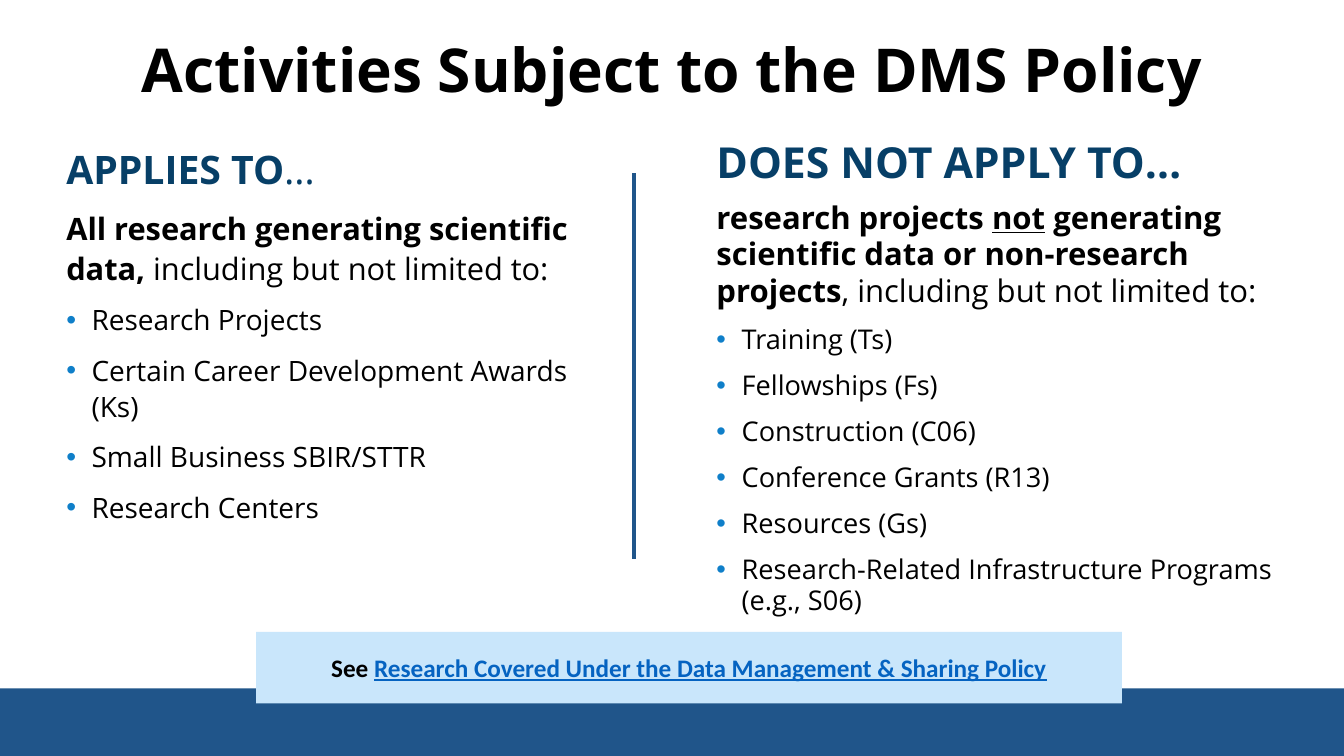
from lxml.etree import SubElement as sub
from pptx import Presentation
from pptx.dml.color import RGBColor as RGB
from pptx.enum.shapes import MSO_CONNECTOR as LINE, MSO_SHAPE as SHAPE
from pptx.enum.text import MSO_ANCHOR as ANCHOR, MSO_AUTO_SIZE as FIT, PP_ALIGN as ALIGN
from pptx.oxml.ns import qn
from pptx.util import Pt

theme = {
    "ink": "000000", "navy": "073F67", "band": "20558A",
    "dot": "0F7FC9", "pale": "C9E6FB", "link": "0563C1",
    "sans": "Open Sans", "note": "Calibri",
    "title": 43.2, "call": 18,
    "left": {"head": 28, "lead": 22, "item": 20},
    "right": {"head": 30.5, "lead": 22.2, "item": 19.4},
}


def write(par, runs, size, color="ink", face="sans", **form):
    """Fill a paragraph with (text, font values) runs, then format it."""
    for key, val in form.items():
        setattr(par, key, val)
    for text, font in runs:
        run = par.add_run()
        run.text = text
        vals = {"name": theme[face], "size": Pt(size), "bold": True} | font
        tint = vals.pop("tint", color)
        for key, val in vals.items():
            setattr(run.font, key, val)
        run.font.color.rgb = RGB.from_string(theme[tint])


def block(box, fill):
    """Add a plain filled rectangle."""
    rect = slide.shapes.add_shape(SHAPE.RECTANGLE, *map(Pt, box))
    rect.shadow.inherit = False
    rect.fill.solid()
    rect.fill.fore_color.rgb = RGB.from_string(theme[fill])
    rect.line.fill.background()
    return rect


deck = Presentation()
deck.slide_width, deck.slide_height = Pt(960), Pt(540)
slide = deck.slides.add_slide(deck.slide_layouts[5])

# Bottom band
block((0, 491.8, 960, 48.2), "band")

# Title
title = slide.shapes.title
place = {"left": 66, "top": 0, "width": 828, "height": 104.4}
for key, val in place.items():
    setattr(title, key, Pt(val))
frame = title.text_frame
frame.auto_size = FIT.NONE
frame.vertical_anchor = ANCHOR.MIDDLE
write(frame.paragraphs[0], [("Activities Subject to the DMS Policy", {})],
      theme["title"], alignment=ALIGN.CENTER, line_spacing=0.9)

# Two columns: heading, lead sentence, bullets
plain = {"bold": False}
columns = [
    ("left", (40.3, 103.7, 398.9, 385.2), 0.9, 1.08,
     [("APPLIES TO", {}), ("…", plain)],
     [("All research generating scientific data, ", {}),
      ("including but not limited to:", plain)],
     ["Research Projects", "Certain Career Development Awards (Ks)",
      "Small Business SBIR/STTR", "Research Centers"]),
    ("right", (504.7, 103.7, 439.2, 346.3), 0.7, 0.98,
     [("DOES NOT APPLY TO…", {})],
     [("research projects ", {}), ("not", {"underline": True}),
      (" generating scientific data or non-research projects", {}),
      (", including but not limited to:", plain)],
     ["Training (Ts)", "Fellowships (Fs)", "Construction (C06)",
      "Conference Grants (R13)", "Resources (Gs)",
      "Research-Related Infrastructure Programs (e.g., S06)"]),
]
for side, box, tight, loose, head, lead, items in columns:
    size = theme[side]
    frame = slide.shapes.add_textbox(*map(Pt, box)).text_frame
    frame.word_wrap = True
    write(frame.paragraphs[0], head, size["head"], "navy", line_spacing=tight)
    form = {"line_spacing": loose, "space_before": Pt(10)}
    write(frame.add_paragraph(), lead, size["lead"], **form)
    for item in items:
        par = frame.add_paragraph()
        write(par, [(item, plain)], size["item"], **form)
        props = par._p.get_or_add_pPr()
        props.set("marL", str(Pt(18)))
        props.set("indent", str(-Pt(18)))
        tint = sub(props, qn("a:buClr"))
        sub(tint, qn("a:srgbClr"), val=theme["dot"])
        sub(props, qn("a:buFont"), typeface="Arial")
        sub(props, qn("a:buChar"), char="•")

# Divider
rule = slide.shapes.add_connector(
    LINE.STRAIGHT, *map(Pt, (452.9, 123.8, 452.9, 399.6)))
rule.line.width = Pt(3)
rule.line.color.rgb = RGB.from_string(theme["band"])
sub(rule._element.spPr, qn("a:effectLst"))

# Callout over the band
frame = block((182.9, 451.4, 618.5, 51.1), "pale").text_frame
inset = {"margin_left": 7.2, "margin_top": 14.4,
         "margin_right": 7.2, "margin_bottom": 14.4}
for key, val in inset.items():
    setattr(frame, key, Pt(val))
frame.word_wrap = True
frame.vertical_anchor = ANCHOR.TOP
write(frame.paragraphs[0],
      [("See ", {}),
       ("Research Covered Under the Data Management & Sharing Policy",
        {"tint": "link", "underline": True})],
      theme["call"], face="note", alignment=ALIGN.CENTER)

deck.save("out.pptx")
